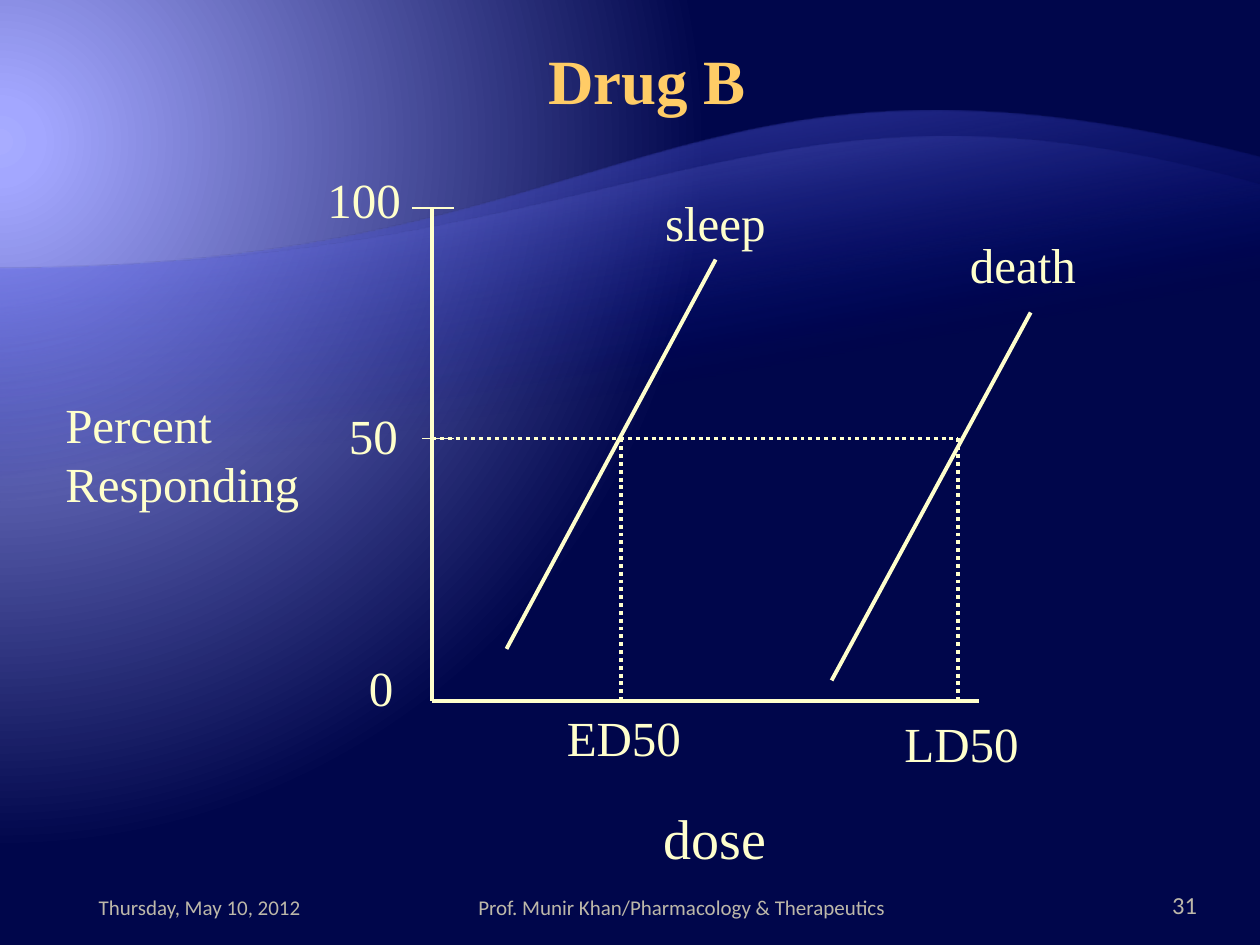
from pptx import Presentation
from pptx.dml.color import RGBColor
from pptx.enum.dml import MSO_LINE
from pptx.enum.shapes import MSO_CONNECTOR
from pptx.enum.text import MSO_ANCHOR, PP_ALIGN
from pptx.oxml import parse_xml
from pptx.oxml.ns import nsdecls, qn
from pptx.util import Inches, Pt

CREAM = RGBColor(0xFF, 0xFF, 0xCC)
GOLD = RGBColor(0xFF, 0xCC, 0x66)
GREY = RGBColor(0xBD, 0xB8, 0xA9)
SERIF, SANS = "Times New Roman", "Calibri"

# Gradient stops: position %, colour, opacity %
BACKDROP_STOPS = [(0, "A8ACFF", 100), (5, "A3A7FF", 100), (90, "00064B", 100)]
BACKDROP_SHADE = ('<a:path path="circle"><a:fillToRect l="20000" t="30000" '
                  'r="135000" b="100000"/></a:path>')
WAVE_SHADE = '<a:lin ang="4800000" scaled="0"/>'

# Waves: bottom, left crest, first control, second control, right crest, stops
WAVES = [
    (7.33, 2.13, (5, 2.13), (5.34, 0.05), 1.25,
     [(65, "000D9E", 0), (100, "797FFF", 55)]),
    (6.37, 2.13, (5, 2.13), (5.98, 0.31), 1.47,
     [(65, "000D9E", 0), (100, "A3A7FF", 30)]),
]

# Chart positions
AXIS_X, AXIS_END = 3.43, 7.77
TOP_Y, HALF_Y, BASE_Y = 1.65, 3.48, 5.56
ED50_X, LD50_X = 4.93, 7.6
TICK_END = 3.6

# Lines: start x, start y, end x, end y, width, dotted
LINES = [
    (AXIS_X, TOP_Y, AXIS_X, BASE_Y, 2.25, False),
    (AXIS_X, BASE_Y, AXIS_END, BASE_Y, 2.25, False),
    (4.02, 5.15, 5.68, 2.06, 2.25, False),
    (6.6, 5.4, 8.18, 2.48, 2.25, False),
    (3.35, HALF_Y, TICK_END, HALF_Y, 0.75, False),
    (3.27, TOP_Y, TICK_END, TOP_Y, 0.75, False),
    (AXIS_X, HALF_Y, LD50_X, HALF_Y, 2.25, True),
    (ED50_X, HALF_Y, ED50_X, BASE_Y, 2.25, True),
    (LD50_X, HALF_Y, LD50_X, BASE_Y, 2.25, True),
]

TITLE = ("Drug B", (4.25, 0.28, 1.77, 0.7))

# Labels: lines of text, box, size
LABELS = [
    (["dose"], (5.17, 6.33, 1.02, 0.63), 32),
    (["sleep"], (5.18, 1.48, 1, 0.57), 28),
    (["death"], (7.6, 1.81, 1.04, 0.57), 28),
    (["100"], (2.5, 1.3, 0.78, 0.57), 28),
    (["50"], (2.67, 3.17, 0.59, 0.57), 28),
    (["0"], (2.83, 5.17, 0.4, 0.57), 28),
    (["ED50"], (4.4, 5.57, 1.11, 0.57), 28),
    (["LD50"], (7.08, 5.61, 1.11, 0.57), 28),
    (["Percent", "Responding"], (0.42, 3.08, 2.06, 1.03), 28),
]

# Footer: text, box, size, alignment, left and right inset
FOOTER = [
    ("Thursday, May 10, 2012", (0.5, 6.95, 2.17, 0.4), 12, PP_ALIGN.CENTER, 0.1, 0.1),
    ("Prof. Munir Khan/Pharmacology & Therapeutics", (2.67, 6.95, 5.58, 0.4), 12,
     PP_ALIGN.CENTER, 0, 0.1),
    ("31", (8.92, 6.95, 0.58, 0.4), 14, PP_ALIGN.RIGHT, 0.1, 0),
]


def apply_gradient(solid_fill, stops, shade):
    """Swap a solid fill element for a gradient."""
    stop_xml = "".join(
        f'<a:gs pos="{position * 1000}"><a:srgbClr val="{colour}">'
        f'<a:alpha val="{opacity * 1000}"/></a:srgbClr></a:gs>'
        for position, colour, opacity in stops)
    gradient = parse_xml(f'<a:gradFill {nsdecls("a")} rotWithShape="1">'
                         f'<a:gsLst>{stop_xml}</a:gsLst>{shade}</a:gradFill>')
    solid_fill.getparent().replace(solid_fill, gradient)


def add_wave(slide, bottom, left_y, control_1, control_2, right_y, stops):
    """Draw the wave upside down, then turn it by 180 degrees."""
    height = bottom - right_y

    def flip(x, y):
        return Inches(10 - x), Inches(bottom - y)

    builder = slide.shapes.build_freeform(*flip(10, bottom))
    builder.add_line_segments(
        [flip(0, bottom), flip(0, left_y), flip(10, right_y)], close=True)
    shape = builder.convert_to_shape(0, Inches(bottom - height))
    # The top edge becomes a curve
    edge = shape.element.findall(".//" + qn("a:lnTo"))[2]
    points = "".join(f'<a:pt x="{x}" y="{y}"/>' for x, y in
                     (flip(*control_1), flip(*control_2), flip(10, right_y)))
    curve = parse_xml(f'<a:cubicBezTo {nsdecls("a")}>{points}</a:cubicBezTo>')
    edge.getparent().replace(edge, curve)
    shape.rotation = 180
    shape.shadow.inherit = False
    shape.line.fill.background()
    shape.fill.solid()
    apply_gradient(shape.element.spPr.find(qn("a:solidFill")), stops, WAVE_SHADE)


def add_line(slide, x1, y1, x2, y2, width, dotted):
    line = slide.shapes.add_connector(
        MSO_CONNECTOR.STRAIGHT, Inches(x1), Inches(y1), Inches(x2), Inches(y2))
    line.line.color.rgb = CREAM
    line.line.width = Pt(width)
    if dotted:
        line.line.dash_style = MSO_LINE.ROUND_DOT
    line.element.spPr.append(parse_xml(f'<a:effectLst {nsdecls("a")}/>'))


def write_text(shape, lines, size, font, colour, bold=False,
               alignment=PP_ALIGN.LEFT, anchor=MSO_ANCHOR.TOP, wrap=False):
    frame = shape.text_frame
    frame.word_wrap = wrap
    frame.vertical_anchor = anchor
    for index, text in enumerate(lines):
        paragraph = frame.add_paragraph() if index else frame.paragraphs[0]
        paragraph.alignment = alignment
        run = paragraph.add_run()
        run.text = text
        run.font.size = Pt(size)
        run.font.name = font
        run.font.bold = bold
        run.font.color.rgb = colour


def add_text(slide, box, lines, *style, **options):
    shape = slide.shapes.add_textbox(*map(Inches, box))
    write_text(shape, lines, *style, **options)
    return shape


def main():
    presentation = Presentation()
    presentation.slide_width, presentation.slide_height = Inches(10), Inches(7.5)
    slide = presentation.slides.add_slide(presentation.slide_layouts[5])

    # Backdrop
    slide.background.fill.solid()
    apply_gradient(slide.element.xpath(".//p:bgPr/a:solidFill")[0],
                   BACKDROP_STOPS, BACKDROP_SHADE)
    for wave in WAVES:
        add_wave(slide, *wave)

    # Title, in front of the waves
    title = slide.shapes.title
    slide.shapes.element.append(title.element)
    text, box = TITLE
    title.left, title.top, title.width, title.height = map(Inches, box)
    write_text(title, [text], 36, SERIF, GOLD, bold=True)

    # Chart lines and labels
    for line in LINES:
        add_line(slide, *line)
    for lines, box, size in LABELS:
        add_text(slide, box, lines, size, SERIF, CREAM)

    # Footer
    for text, box, size, alignment, left, right in FOOTER:
        shape = add_text(slide, box, [text], size, SANS, GREY, alignment=alignment,
                         anchor=MSO_ANCHOR.BOTTOM, wrap=True)
        shape.text_frame.margin_left = Inches(left)
        shape.text_frame.margin_right = Inches(right)

    presentation.save("out.pptx")


if __name__ == "__main__":
    main()
